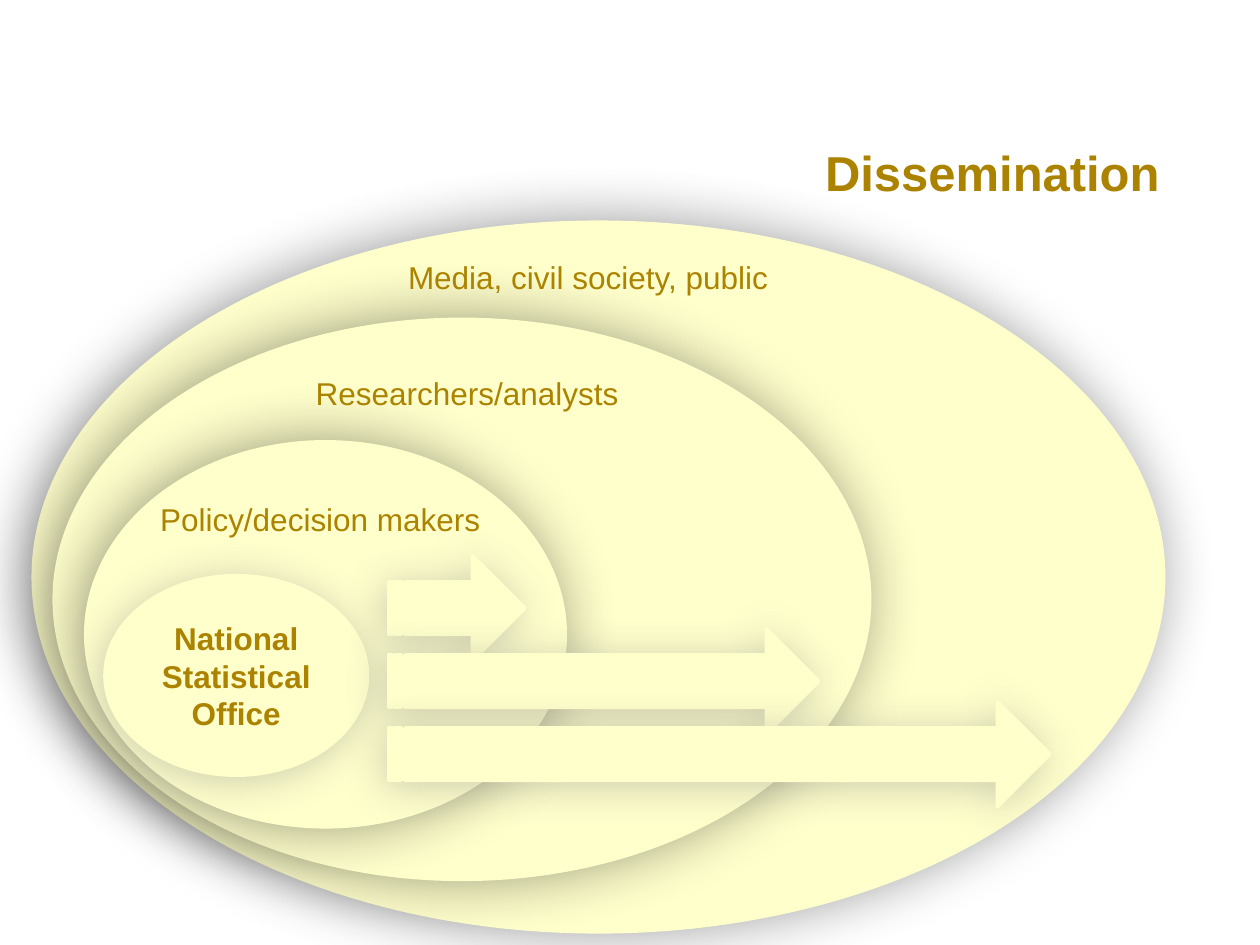
import pptx
import pptx.dml.color
import pptx.enum.shapes
import pptx.enum.text
import pptx.oxml
import pptx.oxml.ns
import pptx.util

Pt = pptx.util.Pt
RGB = pptx.dml.color.RGBColor
SHAPE = pptx.enum.shapes.MSO_SHAPE
ANCHOR = pptx.enum.text.MSO_ANCHOR
CREAM = RGB(0xFF, 0xFF, 0xCC)
GOLD = RGB(0xAC, 0x83, 0x00)
BLACK = RGB(0x00, 0x00, 0x00)
GREY = RGB(0x80, 0x80, 0x80)


def write(shape, text, size=18, bold=False, anchor=ANCHOR.TOP):
    """Put centred gold text in a shape."""
    frame = shape.text_frame
    frame.word_wrap = True
    frame.auto_size = pptx.enum.text.MSO_AUTO_SIZE.NONE
    frame.vertical_anchor = anchor
    frame.text = text
    line = frame.paragraphs[0]
    line.alignment = pptx.enum.text.PP_ALIGN.CENTER
    line.font.name = "Arial"
    line.font.size = Pt(size)
    line.font.bold = bold
    line.font.color.rgb = GOLD


def shade(shape, color, blur, angle):
    """Give a shape a soft outer shadow."""
    shape.shadow.inherit = False
    effects = shape.element.spPr.find(pptx.oxml.ns.qn("a:effectLst"))
    effects.append(pptx.oxml.parse_xml(
        f'<a:outerShdw {pptx.oxml.ns.nsdecls("a")} blurRad="{Pt(blur)}" '
        f'dist="{Pt(3)}" dir="{angle * 60000}" algn="ctr" rotWithShape="0">'
        f'<a:srgbClr val="{color}"><a:alpha val="40000"/></a:srgbClr>'
        '</a:outerShdw>'))


def draw(slide, kind, left, top, width, height, edge=True):
    """Add a cream shape, with an edge for the smaller parts."""
    shape = slide.shapes.add_shape(
        kind, Pt(left), Pt(top), Pt(width), Pt(height))
    shape.fill.solid()
    shape.fill.fore_color.rgb = CREAM
    if edge:
        shape.line.color.rgb = CREAM
        shape.line.width = Pt(2)
        shade(shape, GREY, 24, 135)
    else:
        shape.line.fill.background()
        shade(shape, BLACK, 35, 180)
    return shape


def add_rings(slide, left, top, width, height):
    """Nest the three audience rings and the office in the box."""
    rings = [(0, 0, width, height), (12, 55.5, 468, 322), (30, 125.5, 276, 222)]
    for x, y, wide, high in rings:
        draw(slide, SHAPE.OVAL, left + x, top + y, wide, high, edge=False)
    office = draw(slide, SHAPE.OVAL, left + 42, top + 203, 150, 114)
    write(office, "National Statistical Office", bold=True,
          anchor=ANCHOR.MIDDLE)


def add_arrows(slide, left, top, lengths, height=60, step=41.75):
    """Stack arrows that reach out from the office to each ring."""
    for row, length in enumerate(lengths):
        draw(slide, SHAPE.STRIPED_RIGHT_ARROW, left, top + row * step,
             length, height)


def add_labels(slide, left, top):
    """Name each ring near its top."""
    labels = [("Policy/decision makers", 42, 156, 246),
              ("Researchers/analysts", 126, 84, 246),
              ("Media, civil society, public", 162, 18, 312)]
    for text, x, y, width in labels:
        box = slide.shapes.add_textbox(
            Pt(left + x), Pt(top + y), Pt(width), Pt(29))
        write(box, text)


def add_title(slide, left, top, width, height):
    """Set the title in the box, in front of the shadows."""
    title = slide.shapes.title
    title.left, title.top = Pt(left), Pt(top)
    title.width, title.height = Pt(width), Pt(height)
    write(title, "Dissemination", size=28, bold=True)
    title.element.getparent().append(title.element)


def main():
    """Build and save the slide."""
    deck = pptx.Presentation()
    deck.slide_width, deck.slide_height = Pt(720), Pt(540)
    slide = deck.slides.add_slide(deck.slide_layouts[5])
    left, top = 18, 126
    add_rings(slide, left, top, 648, 407.5)
    add_arrows(slide, left + 204, top + 191.5, [78, 246, 378])
    add_labels(slide, left, top)
    add_title(slide, 420, 78, 294, 41)
    deck.save("out.pptx")


if __name__ == "__main__":
    main()
